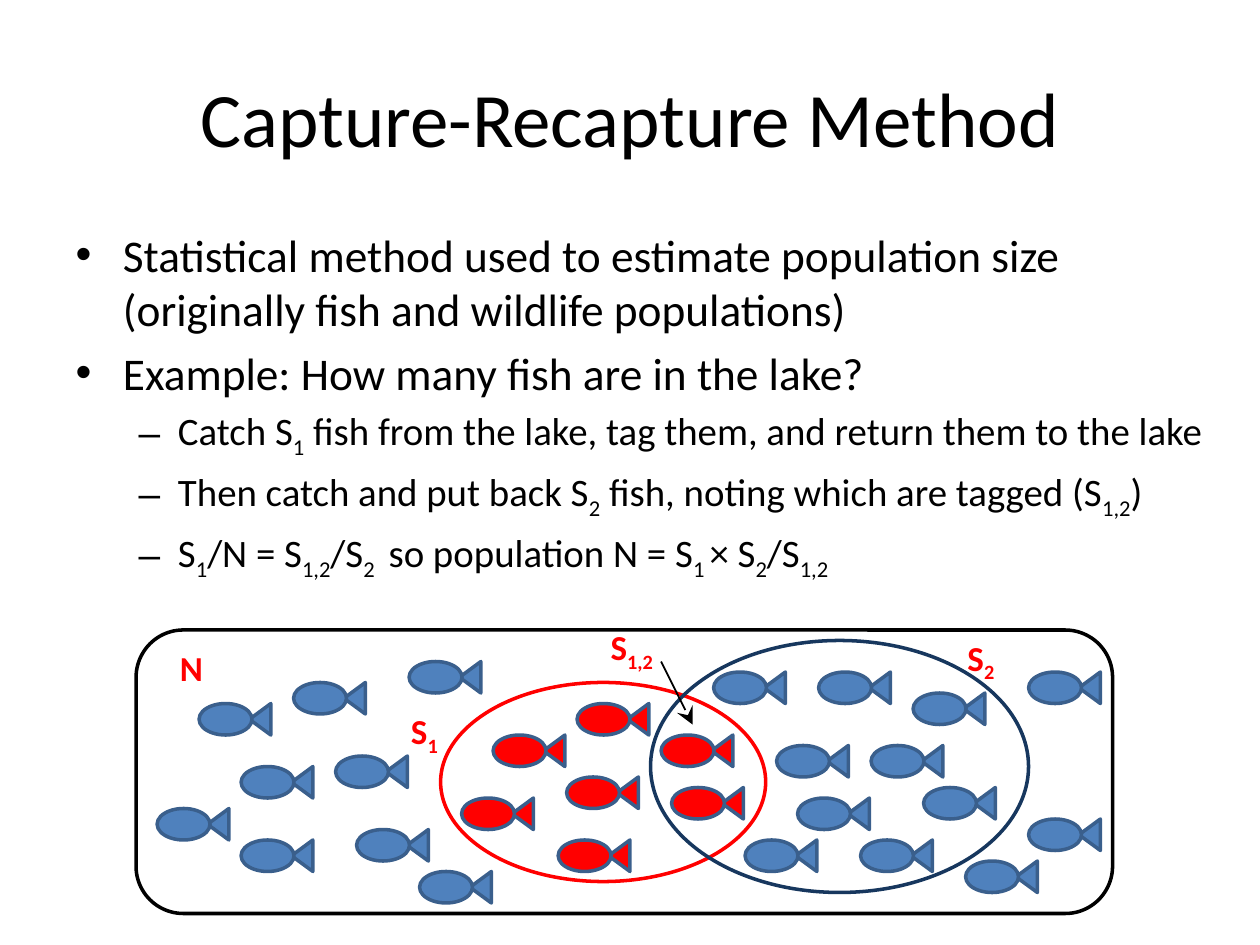
from lxml.etree import SubElement
from pptx import Presentation
from pptx.dml.color import RGBColor
from pptx.enum.shapes import MSO_CONNECTOR, MSO_SHAPE
from pptx.enum.text import MSO_ANCHOR, MSO_AUTO_SIZE, PP_ALIGN
from pptx.oxml.ns import qn
from pptx.util import Inches, Pt

FONT = "Calibri"
BLACK, RED, NAVY = "000000", "FF0000", "17375E"
FISH_BLUE, FISH_EDGE = "4F81BD", "3A5F8C"
UNITS_PER_INCH = 12

BULLETS = [
    (0, "Statistical method used to estimate population size (originally fish and wildlife populations)"),
    (0, "Example: How many fish are in the lake?"),
    (1, "Catch S_1_ fish from the lake, tag them, and return them to the lake"),
    (1, "Then catch and put back S_2_ fish, noting which are tagged (S_1,2_)"),
    (1, "S_1_/N = S_1,2_/S_2 _ so population N = S_1 _× S_2_/S_1,2_"),
]
LEVEL_SIZES = [25.9, 22.2]

UNTAGGED_FISH = [
    (6, 7), (10, 13), (15, 5), (19, 12), (26, 3), (21, 19), (10, 20),
    (55, 4), (61, 11), (63, 16), (65, 4), (75, 15), (69, 20), (74, 6),
    (79, 22), (27, 23), (2, 17), (70, 11), (58, 20), (85, 18), (85, 4),
]
TAGGED_FISH = [(31, 16), (42, 7), (41, 14), (50, 10), (34, 10), (51, 15), (40.2, 20)]
LABELS = [("N", 3, 1), ("S_1_", 25, 7), ("S_2_", 78, 0), ("S_1,2_", 44, -1)]


def color(value):
    return RGBColor.from_string(value)


def write_spans(para, marked_text, size, text_color, bold=False):
    for index, text in enumerate(marked_text.split("_")):
        if not text:
            continue
        span = para.add_run()
        span.text = text
        span.font.name = FONT
        span.font.size = Pt(size)
        span.font.bold = bold
        span.font.color.rgb = color(text_color)
        if index % 2:
            span.font._element.set("baseline", "-25000")


def place(shape, box):
    shape.left, shape.top, shape.width, shape.height = map(Inches, box)


def fill_title(title, box):
    place(title, box)
    title.text_frame.vertical_anchor = MSO_ANCHOR.MIDDLE
    para = title.text_frame.paragraphs[0]
    para.alignment = PP_ALIGN.CENTER
    write_spans(para, "Capture-Recapture Method", 44, BLACK)


def fill_bullets(body, box):
    place(body, box)
    frame = body.text_frame
    frame.auto_size = MSO_AUTO_SIZE.NONE
    for index, (level, text) in enumerate(BULLETS):
        para = frame.add_paragraph() if index else frame.paragraphs[0]
        para.level = level
        write_spans(para, text, LEVEL_SIZES[level], BLACK)


def add_outline(shapes, kind, box, line_color, fill_color=None):
    shape = shapes.add_shape(kind, *map(Inches, box))
    shape.shadow.inherit = False
    shape.line.color.rgb = color(line_color)
    shape.line.width = Pt(2)
    if fill_color:
        shape.fill.solid()
        shape.fill.fore_color.rgb = color(fill_color)
    else:
        shape.fill.background()
    return shape


def add_fish(page, left, top, fill_color):
    fish = page.shapes.add_group_shape()
    tail = add_outline(fish.shapes, MSO_SHAPE.ISOSCELES_TRIANGLE,
                       (left + 0.36, top + 0.04, 0.25, 0.17), FISH_EDGE, fill_color)
    tail.rotation = 270
    add_outline(fish.shapes, MSO_SHAPE.OVAL, (left, top, 0.42, 0.25), FISH_EDGE, fill_color)


def add_label(page, text, left, top):
    label = page.shapes.add_textbox(*map(Inches, (left, top, 0.58, 0.44)))
    label.text_frame.word_wrap = True
    write_spans(label.text_frame.paragraphs[0], text, 20, RED, bold=True)


def add_arrow(page, start, end):
    arrow = page.shapes.add_connector(MSO_CONNECTOR.STRAIGHT, *map(Inches, start + end))
    arrow.line.color.rgb = color(BLACK)
    arrow.line.width = Pt(1)
    SubElement(arrow.line._get_or_add_ln(), qn("a:tailEnd"), type="stealth", w="lg", len="lg")
    SubElement(arrow._element.spPr, qn("a:effectLst"))


def draw_lake(page, box):
    left, top, width, height = box

    def point(column, row):
        return left + column / UNITS_PER_INCH, top + row / UNITS_PER_INCH

    for fill_color, school in ((FISH_BLUE, UNTAGGED_FISH), (RED, TAGGED_FISH)):
        for column, row in school:
            add_fish(page, *point(column, row), fill_color)
    add_outline(page.shapes, MSO_SHAPE.ROUNDED_RECTANGLE, box, BLACK)
    add_outline(page.shapes, MSO_SHAPE.OVAL, point(29, 5) + (2.58, 1.58), RED)
    add_outline(page.shapes, MSO_SHAPE.OVAL, point(49, 1) + (3, 2), NAVY)
    for text, column, row in LABELS:
        add_label(page, text, *point(column, row))
    add_arrow(page, point(50, 3), point(53, 9))


def main():
    deck = Presentation()
    deck.slide_width, deck.slide_height = Inches(10), Inches(7.5)
    page = deck.slides.add_slide(deck.slide_layouts[1])
    fill_title(page.shapes.title, (0.5, 0.3, 9, 1.25))
    fill_bullets(page.placeholders[1], (0.5, 1.75, 9.25, 2.92))
    draw_lake(page, (1.08, 5, 7.75, 2.25))
    deck.save("out.pptx")


if __name__ == "__main__":
    main()
